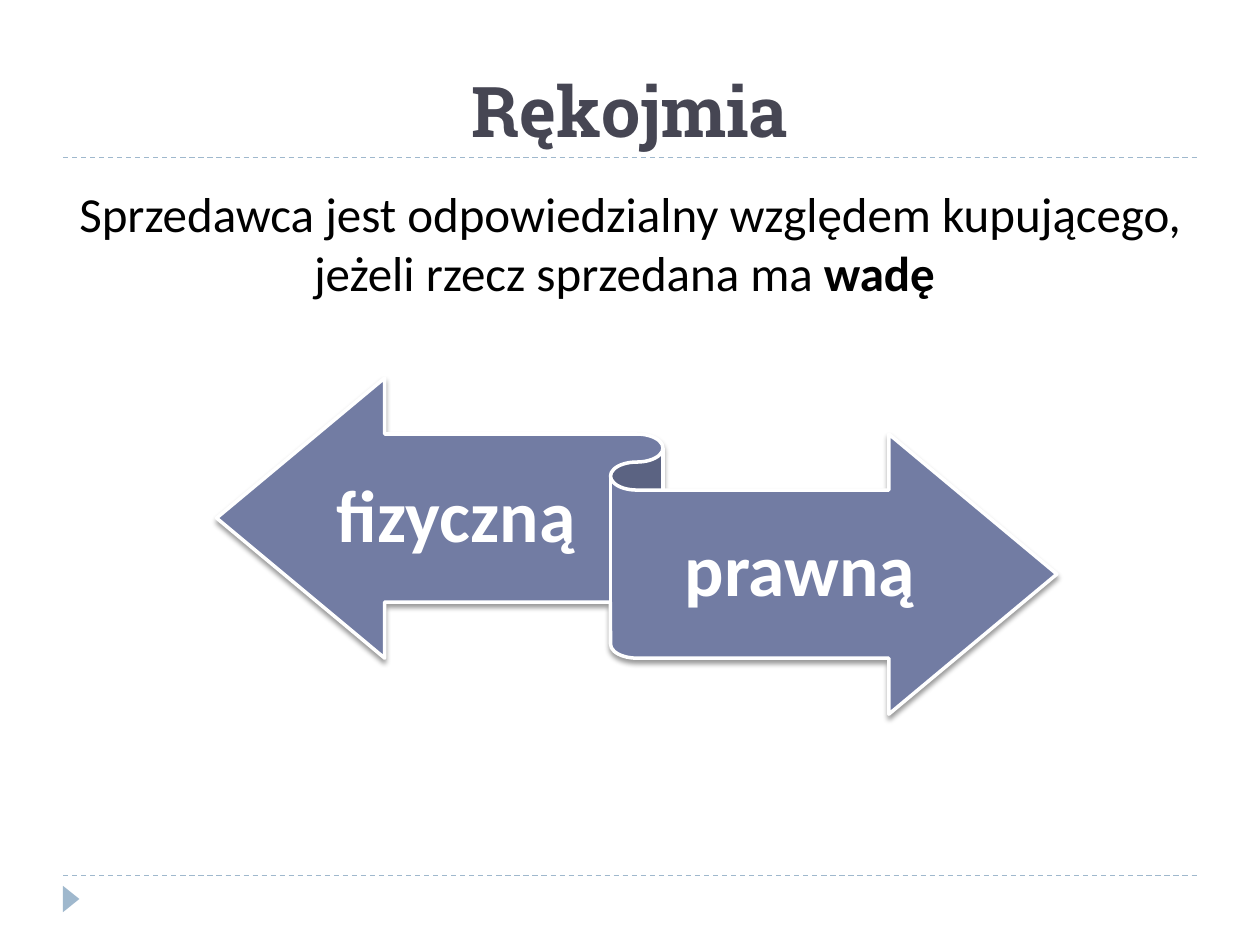
from lxml import etree
from pptx import Presentation
from pptx.dml.color import RGBColor as Rgb
from pptx.enum.dml import MSO_LINE as Dash
from pptx.enum.shapes import MSO_CONNECTOR as Conn, MSO_SHAPE as Kind
from pptx.enum.text import MSO_ANCHOR as Anchor, MSO_AUTO_SIZE as Fit, PP_ALIGN as Align
from pptx.oxml import parse_xml
from pptx.oxml.ns import nsdecls, qn
from pptx.util import Pt

HUES = {"title": "464653", "text": "000000", "ribbon": "727CA3",
        "rule": "9FB8CD", "white": "FFFFFF"}


def hue(name):
    return Rgb.from_string(HUES[name])


def write(box, runs, size, font, tone, anchor, inset):
    """Fill a text frame with one centred paragraph of (text, bold) runs."""
    frame = box.text_frame
    frame.word_wrap = True
    frame.auto_size = Fit.NONE
    frame.vertical_anchor = anchor
    frame.margin_left = frame.margin_right = Pt(inset[0])
    frame.margin_top = frame.margin_bottom = Pt(inset[1])
    para = frame.paragraphs[0]
    para.alignment = Align.CENTER
    for text, bold in runs:
        run = para.add_run()
        run.text = text
        run.font.size = Pt(size)
        run.font.name = font
        run.font.bold = bold
        run.font.color.rgb = hue(tone)
    return para


deck = Presentation()
deck.slide_width, deck.slide_height = Pt(720), Pt(540)
slide = deck.slides.add_slide(deck.slide_layouts[5])
shapes = slide.shapes

# Dashed rules and corner marker
for y in (500.4, 90):
    rule = shapes.add_connector(Conn.STRAIGHT, Pt(36), Pt(y), Pt(684), Pt(y))
    rule.line.color.rgb = hue("rule")
    rule.line.width = Pt(0.75)
    rule.line.dash_style = Dash.DASH
    etree.SubElement(rule.line._get_or_add_ln().getparent(), qn("a:effectLst"))

mark = shapes.add_shape(Kind.ISOSCELES_TRIANGLE, Pt(33.1), Pt(509), Pt(15.1), Pt(9.4))
mark.rotation = 90
mark.shadow.inherit = False
mark.fill.solid()
mark.fill.fore_color.rgb = hue("rule")
mark.line.fill.background()

# Title and statement
title = shapes.title
title.left, title.top, title.width, title.height = Pt(36), Pt(12.2), Pt(648), Pt(77.8)
write(title, [("Rękojmia", True)], 40, "Roboto Slab", "title", Anchor.BOTTOM, (7.2, 3.6))

body = shapes.add_textbox(Pt(36), Pt(101.5), Pt(648), Pt(383.8))
para = write(body, [("Sprzedawca jest odpowiedzialny względem kupującego, "
                     "jeżeli rzecz sprzedana ma ", False), ("wadę ", True)],
             28, "Calibri", "text", Anchor.TOP, (7.2, 3.6))
para.space_before = Pt(6)

# Ribbon with a soft shadow below, and its two labels
ribbon = shapes.add_shape(Kind.LEFT_RIGHT_RIBBON, Pt(123.8), Pt(216), Pt(480.2), Pt(192.1))
ribbon.fill.solid()
ribbon.fill.fore_color.rgb = hue("ribbon")
ribbon.line.color.rgb = hue("white")
ribbon.line.width = Pt(2)
ribbon.shadow.inherit = False
glow = ribbon.fill._xPr.find(qn("a:effectLst"))
glow.append(parse_xml(
    f'<a:outerShdw {nsdecls("a")} blurRad="{Pt(3)}" dist="{Pt(2)}" dir="5400000" '
    'rotWithShape="0"><a:srgbClr val="000000"><a:alpha val="40000"/></a:srgbClr>'
    '</a:outerShdw>'))

for text, x, y, wide in (("fizyczną", 181.4, 249.1, 158.4), ("prawną", 363.6, 280.1, 187.2)):
    label = shapes.add_textbox(Pt(x), Pt(y), Pt(wide), Pt(94.3))
    para = write(label, [(text, True)], 42, "Calibri", "white", Anchor.MIDDLE, (0, 12))
    para.line_spacing = 0.9

deck.save("out.pptx")
